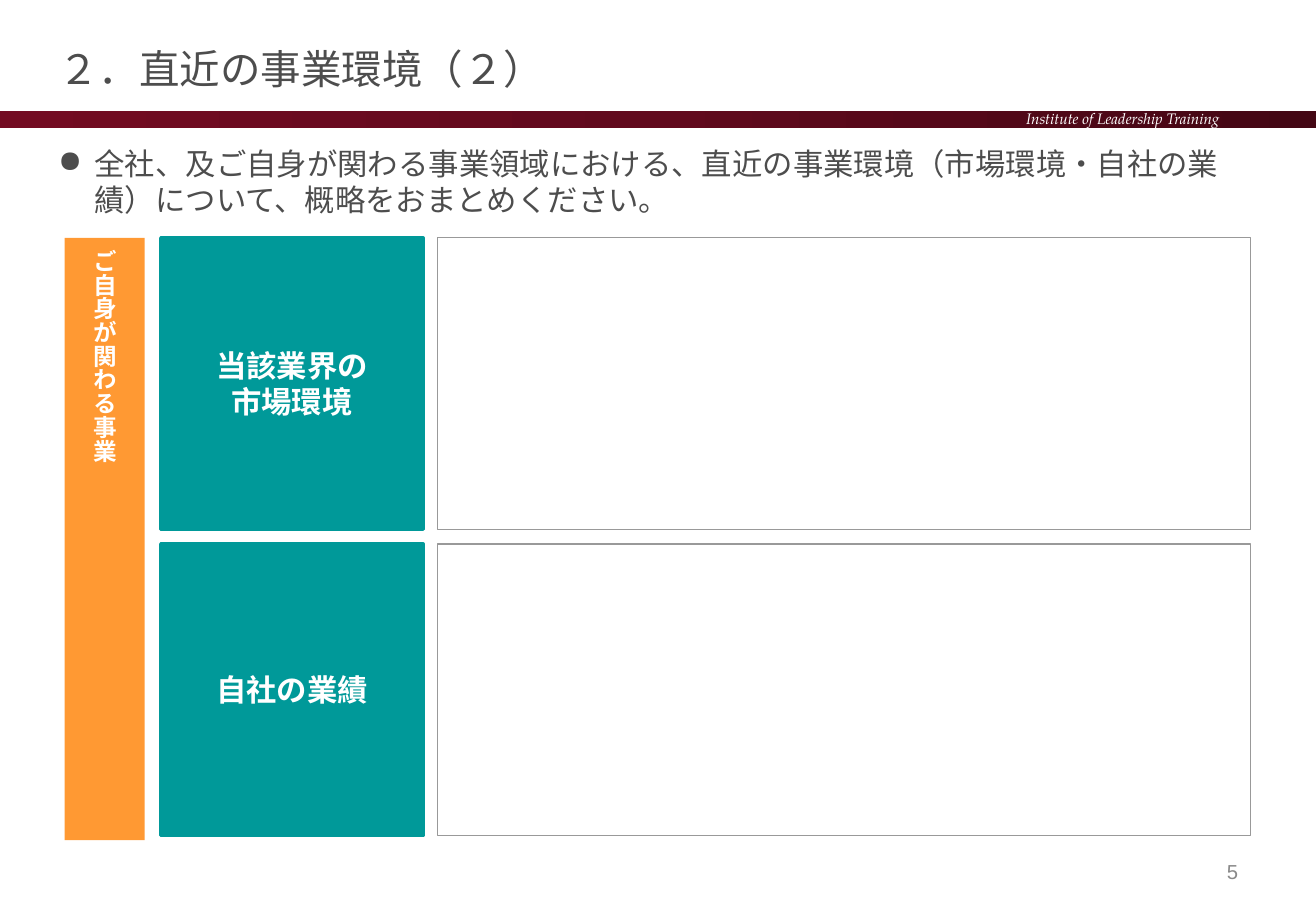
from copy import deepcopy

from lxml import etree
from pptx import Presentation
from pptx.dml.color import RGBColor
from pptx.enum import shapes, text
from pptx.oxml import ns
from pptx.util import Pt

HUES = {"ink": "4D4D4D", "white": "FFFFFF", "teal": "009999",
        "orange": "FF9933", "rule": "999999", "page": "898989",
        "dark": "440714", "wine": "61091D", "red": "730B22"}
SANS = "Noto Sans CJK JP"
ALIGN = text.PP_ALIGN
MID = text.MSO_ANCHOR.MIDDLE
LEAD = Pt(21.3)


def hue(name):
    return RGBColor.from_string(HUES[name])


def write(shape, words, size, color, face=SANS, align=ALIGN.LEFT, bold=False,
          italic=False, anchor=MID, pad=(7.2, 3.6), lead=None):
    frame = shape.text_frame
    frame.word_wrap = True
    frame.vertical_anchor = anchor
    frame.margin_left = frame.margin_right = Pt(pad[0])
    frame.margin_top = frame.margin_bottom = Pt(pad[1])
    frame.text = words
    for para in frame.paragraphs:
        para.alignment = align
        if lead:
            para.line_spacing = lead
        for run in para.runs:
            font = run.font
            font.size, font.name = Pt(size), face
            font.bold, font.italic = bold, italic
            font.color.rgb = hue(color)
            east = etree.SubElement(run._r.get_or_add_rPr(), ns.qn("a:ea"))
            east.set("typeface", face)
    return frame


def label(slide, box, words, size, color, **style):
    shape = slide.shapes.add_textbox(*map(Pt, box))
    return write(shape, words, size, color, **style)


def block(slide, box, fill=None, line=None, width=0):
    shape = slide.shapes.add_shape(shapes.MSO_SHAPE.RECTANGLE, *map(Pt, box))
    shape.shadow.inherit = False
    if fill:
        shape.fill.solid()
        shape.fill.fore_color.rgb = hue(fill)
    if line:
        shape.line.color.rgb = hue(line)
        shape.line.width = Pt(width)
    else:
        shape.line.fill.background()
    return shape


# Title, gradient band and organisation name
def header(slide, box):
    x, y, w, h = box
    band = block(slide, (x, y + h - 10, w, 10))
    band.fill.gradient()
    band.fill.gradient_angle = 180
    first = band._element.spPr.find(".//" + ns.qn("a:gs"))
    first.addnext(deepcopy(first))
    stops = zip(band.fill.gradient_stops, ("dark", "wine", "red"), (0, 0.5, 1))
    for stop, name, place in stops:
        stop.color.rgb = hue(name)
        stop.position = place
    label(slide, (x + w - 197.5, y + h - 15, 166, 18),
          "Institute of Leadership Training", 9, "white",
          face="TeX Gyre Pagella", align=ALIGN.CENTER, italic=True,
          anchor=text.MSO_ANCHOR.TOP)
    label(slide, (x + 27.4, y + 15, 572, 51), "２．直近の事業環境（２）", 24, "ink")


# Bulleted instruction
def lead_in(slide, box):
    frame = label(slide, box, "全社、及ご自身が関わる事業領域における、直近の事業環境"
                  "（市場環境・自社の業績）について、概略をおまとめください。",
                  18, "ink", anchor=text.MSO_ANCHOR.TOP, lead=LEAD)
    props = frame.paragraphs[0]._p.get_or_add_pPr()
    props.set("marL", str(Pt(21.6)))
    props.set("indent", str(-Pt(21.6)))
    tint = etree.SubElement(props, ns.qn("a:buClr"))
    etree.SubElement(tint, ns.qn("a:srgbClr")).set("val", HUES["ink"])
    etree.SubElement(props, ns.qn("a:buChar")).set("char", "●")


# Vertical heading with labelled answer boxes
def form(slide, box):
    x, y, w, h = box
    gap, side, head, tall = 8.7, 47.5, 155.5, 172.8
    for i, words in enumerate(("当該業界の\n市場環境", "自社の業績")):
        top = y + i * (tall + gap)
        left = x + side + gap + 0.8
        tag = block(slide, (left, top, head, tall), "teal", "teal", 2)
        write(tag, words, 18, "white", align=ALIGN.CENTER, bold=True,
              pad=(0, 3.6), lead=LEAD)
        left += head + gap
        block(slide, (left, top, x + w - left, tall), "white", "rule", 0.75)
    bar = block(slide, (x, y, side, h), "orange")
    frame = write(bar, "ご自身が関わる事業", 14, "white", bold=True, pad=(0, 3.6))
    frame._txBody.bodyPr.set("vert", "eaVert")


# Page number
def footer(slide, box):
    label(slide, box, "5", 12, "page", face="Arial", align=ALIGN.RIGHT)


def main():
    deck = Presentation()
    deck.slide_width, deck.slide_height = Pt(780), Pt(540)
    slide = deck.slides.add_slide(deck.slide_layouts[6])
    header(slide, (0, 0, 780, 76))
    lead_in(slide, (27.4, 83, 731.5, 45.4))
    form(slide, (38.3, 141, 703, 357))
    footer(slide, (689, 502, 52, 29))
    deck.save("out.pptx")


if __name__ == "__main__":
    main()
